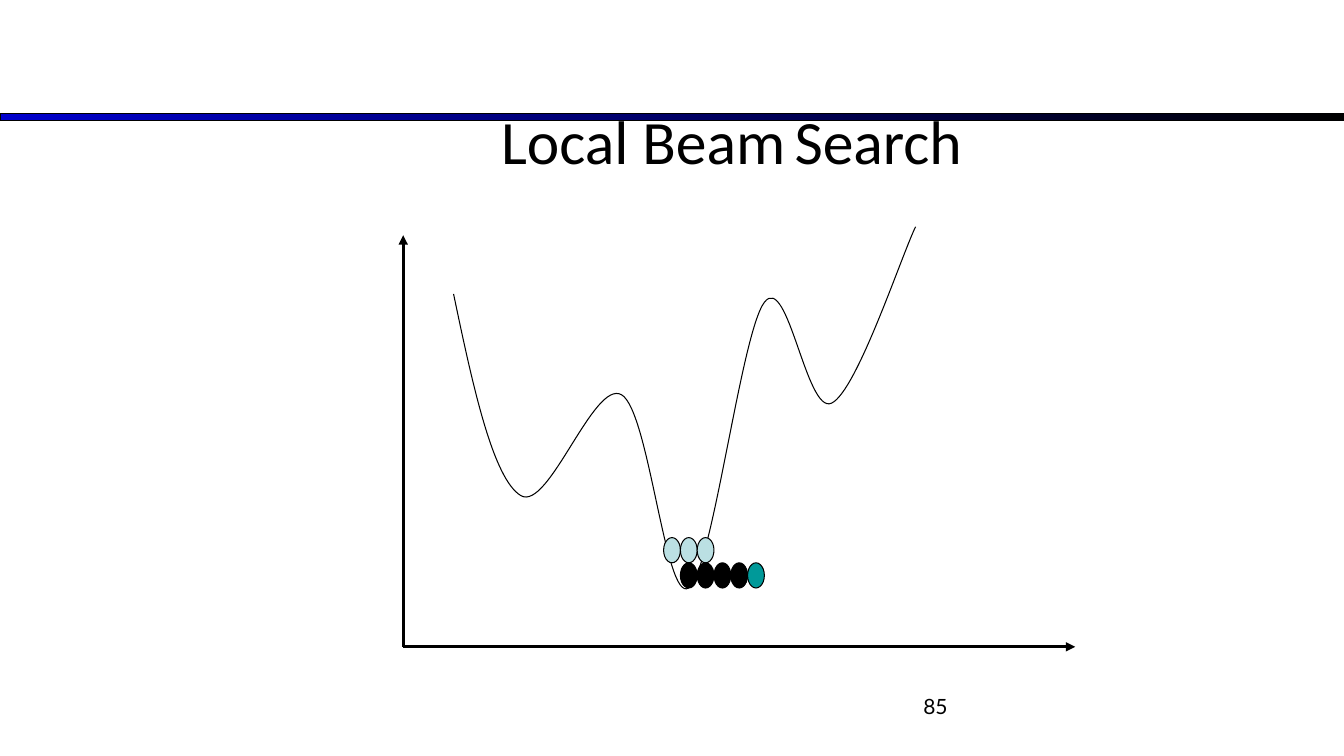
from lxml import etree
from pptx import Presentation
from pptx.dml.color import RGBColor
from pptx.enum.shapes import MSO_CONNECTOR, MSO_SHAPE
from pptx.enum.text import MSO_ANCHOR, PP_ALIGN
from pptx.oxml.ns import qn
from pptx.util import Inches, Pt

RECTANGLE, OVAL = MSO_SHAPE.RECTANGLE, MSO_SHAPE.OVAL
STRAIGHT = MSO_CONNECTOR.STRAIGHT
CENTER, RIGHT = PP_ALIGN.CENTER, PP_ALIGN.RIGHT
TOP, MIDDLE = MSO_ANCHOR.TOP, MSO_ANCHOR.MIDDLE

COLUMNS, ROWS = 160, 90
BLACK, BLUE, PALE, TEAL = "000000", "0000CC", "BBE0E3", "009999"

# Cost curve in grid cells: a start, then two control points and an end per bend
COST_CURVE = [
    (54, 35),
    (56.3, 46), (58.7, 57), (62, 59),
    (65.3, 61), (70.7, 45.1), (74, 47),
    (77.3, 48.9), (79.2, 71.9), (82, 70),
    (84.8, 68.1), (88.2, 39.7), (91, 36),
    (93.8, 32.3), (96, 49.4), (99, 48),
    (102, 46.6), (107.3, 30.5), (109, 27),
]
STATE_WIDTH, STATE_HEIGHT = 2, 3
# Left column, top row and colours of each row of beam states
BEAM_ROWS = [(79, 64, [PALE] * 3), (81, 67, [BLACK] * 4 + [TEAL])]


def cells(*values):
    """Turn counts of grid cells (1/12 inch) into lengths."""
    return [Inches(value / 12) for value in values]


def color(hex_string):
    return RGBColor.from_string(hex_string)


class SlideBuilder:
    font = "Calibri"
    thin, thick = 0.75, 2.25

    def __init__(self, presentation):
        self.slide = presentation.slides.add_slide(presentation.slide_layouts[6])
        self.shapes = self.slide.shapes

    def outline(self, shape, width):
        shape.line.color.rgb = color(BLACK)
        shape.line.width = Pt(width)

    def shape(self, kind, left, top, width, height, fill):
        """Add an outlined shape; a pair of colours gives a gradient."""
        shape = self.shapes.add_shape(kind, *cells(left, top, width, height))
        shape.shadow.inherit = False
        self.outline(shape, self.thin)
        if isinstance(fill, tuple):
            shape.fill.gradient()
            shape.fill.gradient_angle = 0
            for stop, position, shade in zip(shape.fill.gradient_stops, (0, 1), fill):
                stop.position = position
                stop.color.rgb = color(shade)
        else:
            shape.fill.solid()
            shape.fill.fore_color.rgb = color(fill)

    def text(self, runs, left, top, width, height, *, size, font=None,
             align=CENTER, anchor=TOP):
        """Add one paragraph; each run is (wording, size or None, italic)."""
        box = self.shapes.add_textbox(*cells(left, top, width, height))
        frame = box.text_frame
        frame.word_wrap = True
        frame.vertical_anchor = anchor
        paragraph = frame.paragraphs[0]
        paragraph.alignment = align
        for wording, own_size, italic in runs:
            run = paragraph.add_run()
            run.text = wording
            run.font.name = font or self.font
            run.font.size = Pt(own_size or size)
            run.font.italic = italic
            run.font.color.rgb = color(BLACK)

    def arrow(self, start, end):
        axis = self.shapes.add_connector(STRAIGHT, *cells(*start, *end))
        self.outline(axis, self.thick)
        etree.SubElement(axis.line._get_or_add_ln(), qn("a:tailEnd"), type="triangle")
        etree.SubElement(axis._element.spPr, qn("a:effectLst"))

    def curve(self, points):
        """Draw cubic bends by grouping the line segments in threes."""
        start, *rest = [cells(*point) for point in points]
        builder = self.shapes.build_freeform(*start)
        builder.add_line_segments(rest, close=False)
        shape = builder.convert_to_shape()
        shape.shadow.inherit = False
        shape.fill.background()
        self.outline(shape, self.thin)
        segments = list(shape._element.iter(qn("a:lnTo")))
        for first in range(0, len(segments), 3):
            bend = etree.SubElement(segments[first].getparent(), qn("a:cubicBezTo"))
            for segment in segments[first:first + 3]:
                bend.append(segment[0])
                segment.getparent().remove(segment)


def main():
    presentation = Presentation()
    presentation.slide_width, presentation.slide_height = cells(COLUMNS, ROWS)
    page = SlideBuilder(presentation)

    page.shape(RECTANGLE, 0, 13.5, COLUMNS, 0.9, (BLUE, BLACK))
    page.text([("85", None, False)], 86, 82, 28, 6.2,
              size=15, font="Lato", align=RIGHT)
    page.text([("Local Beam", None, False), (" ", 28, True), ("Search", None, False)],
              36, 11.3, 102.2, 10.8, size=44, anchor=MIDDLE)

    origin = (48, 77)
    for axis_end in [(48, 28), (128, 77)]:
        page.arrow(origin, axis_end)
    page.curve(COST_CURVE)

    for left, top, fills in BEAM_ROWS:
        for index, fill in enumerate(fills):
            page.shape(OVAL, left + index * STATE_WIDTH, top,
                       STATE_WIDTH, STATE_HEIGHT, fill)

    presentation.save("out.pptx")


if __name__ == "__main__":
    main()
